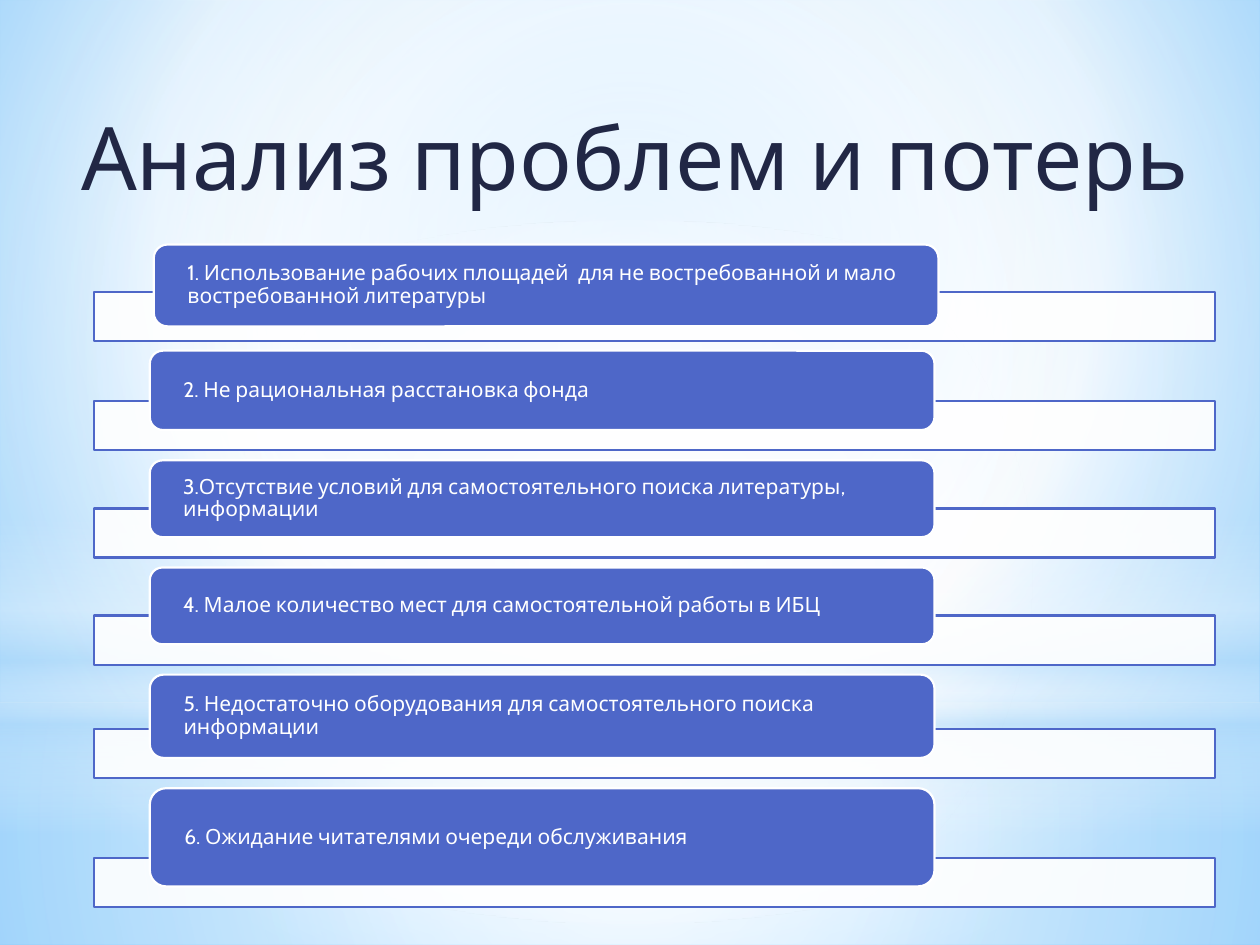
"""Build the slide on problems and losses as six staggered cards."""
from lxml.etree import SubElement
from pptx import Presentation
from pptx.dml.color import RGBColor
from pptx.enum.shapes import MSO_SHAPE
from pptx.enum.text import MSO_ANCHOR, PP_ALIGN
from pptx.oxml.ns import qn
from pptx.util import Cm, Pt

WHITE, BLUE, NAVY, SKY = "FFFFFF", "4E67C8", "212745", "B4DCFA"
MID = (50, 50, 50, 50)
ITEMS = [
    ("1. Использование рабочих площадей  для не востребованной и мало востребованной литературы", 1.65),
    ("2. Не рациональная расстановка фонда", 1.6),
    ("3.Отсутствие условий для самостоятельного поиска литературы, информации", 1.55),
    ("4. Малое количество мест для самостоятельной работы в ИБЦ", 1.55),
    ("5. Недостаточно оборудования для самостоятельного поиска информации", 1.68),
    ("6. Ожидание читателями очереди обслуживания", 1.98),
]


def color(text):
    return RGBColor.from_string(text)


def fade(node, alpha):
    SubElement(node, qn("a:alpha"), val=str(alpha * 1000))


def blend(host, stops, focus=None):
    old = host.find(qn("a:solidFill"))
    grad = SubElement(host, qn("a:gradFill"), rotWithShape="1")
    host.replace(old, grad)
    steps = SubElement(grad, qn("a:gsLst"))
    for place, tint, alpha in stops:
        stop = SubElement(steps, qn("a:gs"), pos=str(place * 1000))
        fade(SubElement(stop, qn("a:srgbClr"), val=tint), alpha)
    if focus:
        way = SubElement(grad, qn("a:path"), path="circle")
        SubElement(way, qn("a:fillToRect"),
                   {side: str(part * 1000) for side, part in zip("ltrb", focus)})
    else:
        SubElement(grad, qn("a:lin"), ang="5400000", scaled="0")


class Deck:
    def __init__(self, wide, high, font):
        self.show = Presentation()
        self.show.slide_width, self.show.slide_height = Cm(wide), Cm(high)
        self.font = font
        self.slide = self.show.slides.add_slide(self.show.slide_layouts[5])

    def back(self, stops, focus):
        self.slide.background.fill.solid()
        blend(self.slide.element.find(".//" + qn("p:bgPr")), stops, focus)

    def shape(self, kind, box, fill, line=None):
        item = self.slide.shapes.add_shape(kind, *map(Cm, box))
        item.shadow.inherit = False
        item.fill.solid()
        item.fill.fore_color.rgb = color(fill)
        if line:
            item.line.color.rgb = color(line)
            item.line.width = Pt(1.25)
        else:
            item.line.fill.background()
        return item

    def glow(self, kind, box, stops, focus=None):
        item = self.shape(kind, box, WHITE)
        blend(item.element.spPr, stops, focus)

    def label(self, frame, text, size, tint, align, inset=0):
        frame.word_wrap = True
        frame.vertical_anchor = MSO_ANCHOR.MIDDLE
        frame.margin_left = frame.margin_right = Cm(inset)
        frame.margin_top = frame.margin_bottom = 0
        para = frame.paragraphs[0]
        para.alignment = align
        run = para.add_run()
        run.text = text
        run.font.name, run.font.size = self.font, Pt(size)
        run.font.color.rgb = color(tint)
        return para

    def title(self, text, box):
        head = self.slide.shapes.title
        head.left, head.top, head.width, head.height = map(Cm, box)
        self.label(head.text_frame, text, 50, NAVY, PP_ALIGN.CENTER)
        self.slide.shapes.element.append(head.element)

    def bar(self, box):
        item = self.shape(MSO_SHAPE.RECTANGLE, box, WHITE, BLUE)
        fade(item.element.spPr.find(qn("a:solidFill"))[0], 90)

    def card(self, box, text):
        item = self.shape(MSO_SHAPE.ROUNDED_RECTANGLE, box, BLUE, WHITE)
        para = self.label(item.text_frame, text, 12, WHITE, PP_ALIGN.LEFT, 0.6)
        para.line_spacing = 0.9


def main():
    deck = Deck(25.4, 19.05, "Cabin")
    deck.back([(0, "9ED5FF", 100), (60, WHITE, 100), (100, "5BB9FF", 100)],
              (20, 10, 20, 60))
    rect = MSO_SHAPE.RECTANGLE
    deck.glow(rect, (0, 14.17, 25.4, 4.88),
              [(0, WHITE, 91), (37, WHITE, 76), (100, SKY, 79)], MID)
    deck.glow(rect, (0, 0, 25.4, 14.17),
              [(0, WHITE, 89), (48, WHITE, 62), (100, SKY, 79)], MID)
    deck.glow(rect, (0, 10.46, 25.4, 6.35),
              [(0, WHITE, 0), (29, WHITE, 30), (45, SKY, 40),
               (55, WHITE, 26), (65, SKY, 60), (100, WHITE, 0)])
    deck.glow(MSO_SHAPE.OVAL, (0, 4.45, 25.4, 14.17),
              [(0, WHITE, 100), (56, WHITE, 0)], MID)
    deck.title("Анализ проблем и потерь", (1.27, 1.96, 23.06, 2.36))

    top, thick, lap, gap = 4.81, 0.99, 0.58, 0.2
    for spot, (text, high) in enumerate(ITEMS):
        right, down = (0.08, 0.12) if spot == 0 else (0, 0)
        base = top + high - lap
        deck.bar((1.9, base, 22.6, thick))
        deck.card((3.02 + right, top + down, 15.82, high), text)
        top = base + thick + gap
    deck.show.save("out.pptx")


if __name__ == "__main__":
    main()
